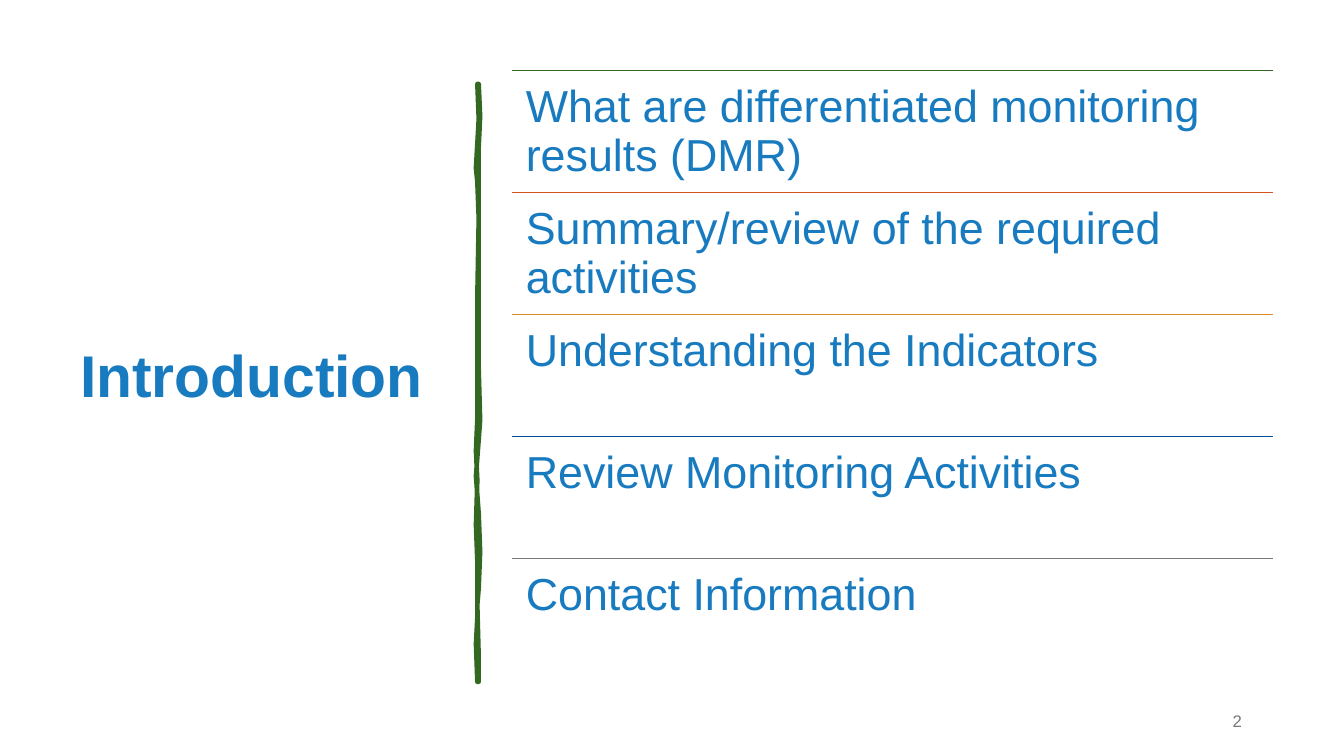
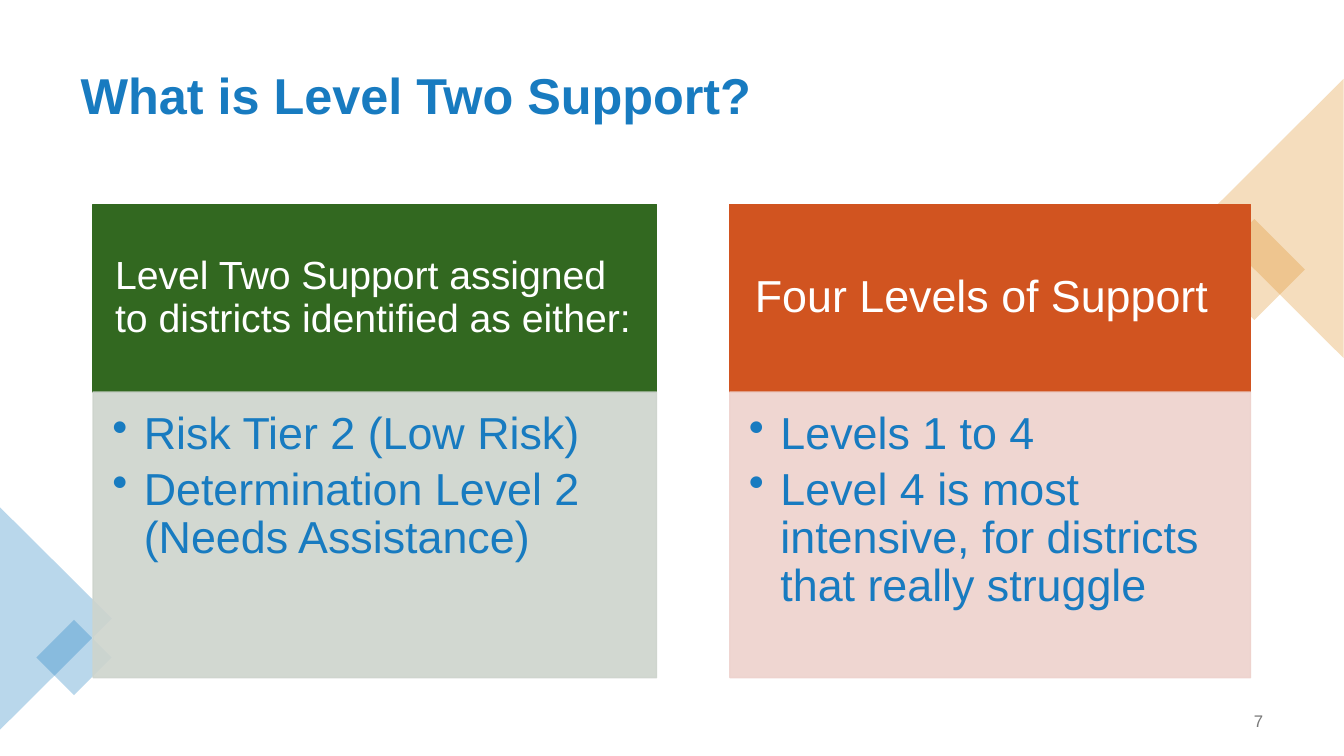
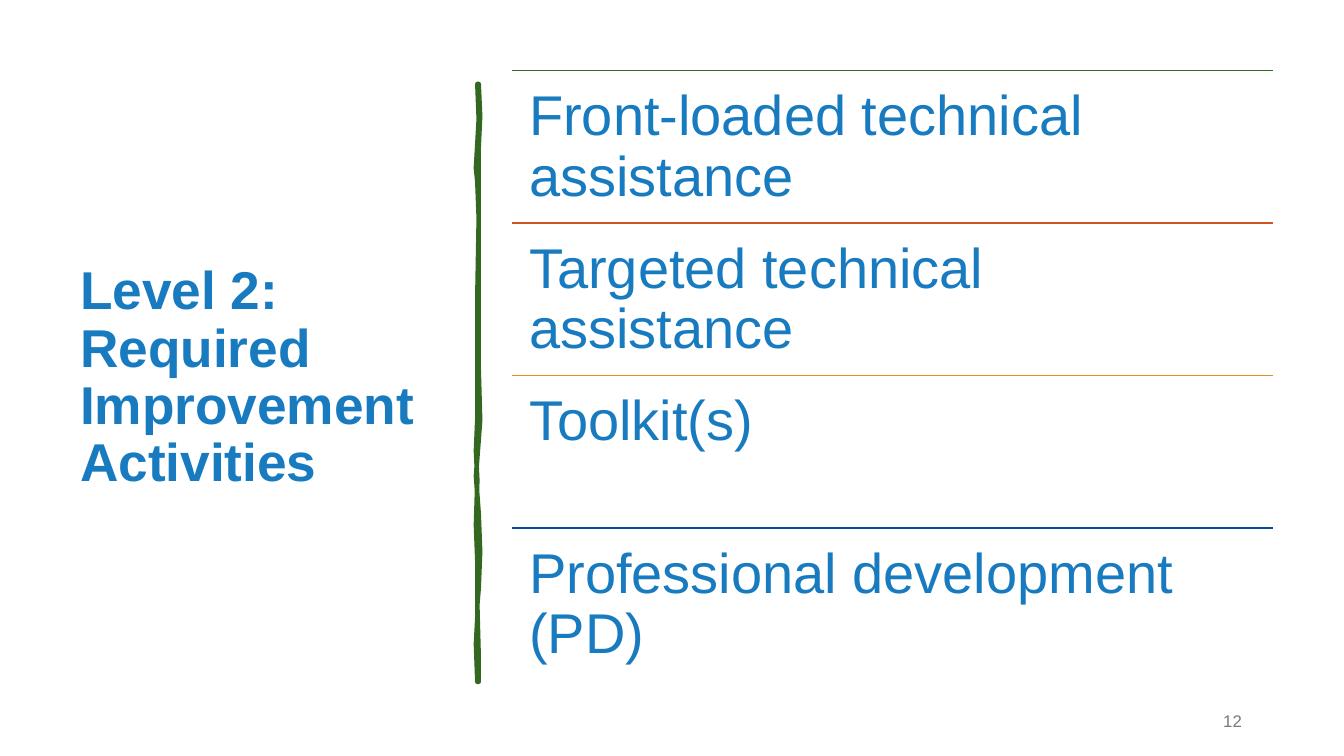
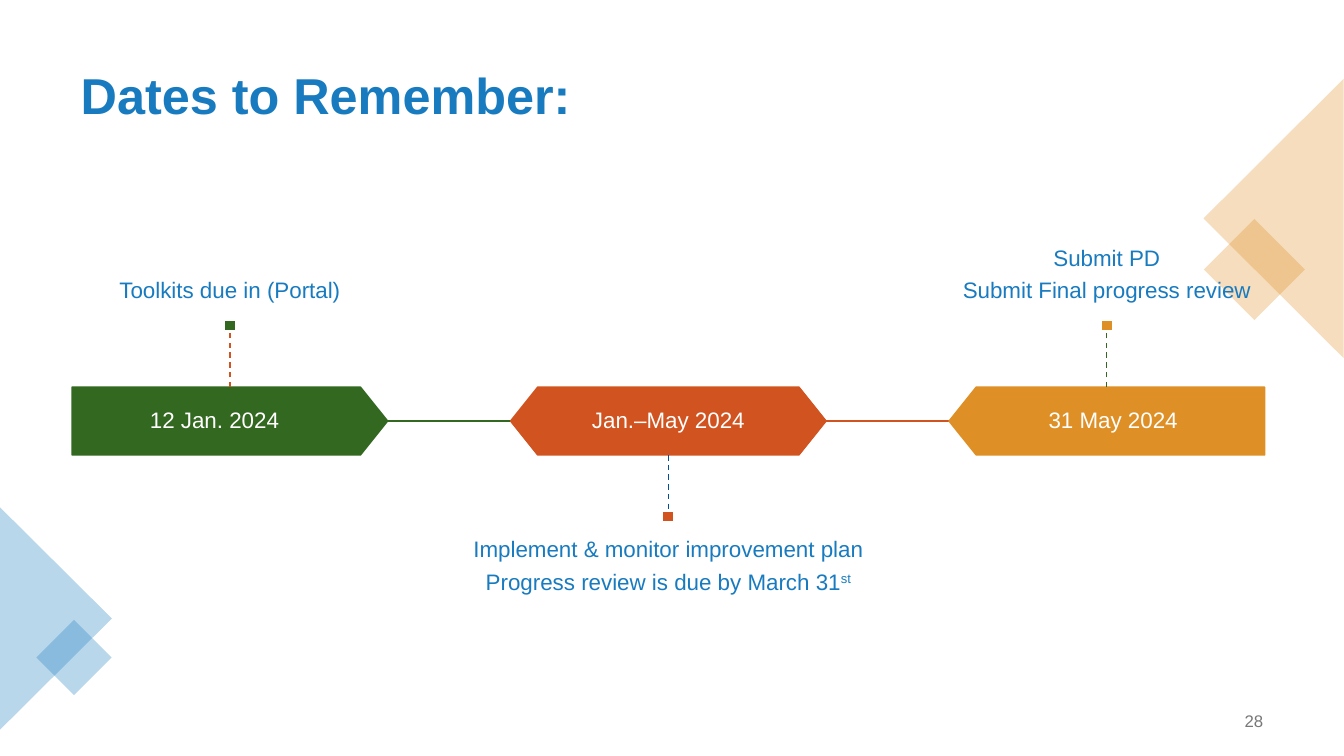
from dataclasses import dataclass

from lxml import etree
from pptx import Presentation
from pptx.dml.color import RGBColor
from pptx.enum import dml, shapes, text
from pptx.oxml.ns import qn
from pptx.util import Pt

KINDS = shapes.MSO_SHAPE
ALIGN = text.PP_ALIGN
ANCHOR = text.MSO_ANCHOR


@dataclass(frozen=True)
class Theme:
    font: str = "Arial"
    blue: str = "187BC0"
    green: str = "326820"
    rust: str = "D15420"
    amber: str = "DE9027"
    navy: str = "004E9A"
    gray: str = "787878"
    white: str = "FFFFFF"
    pale_green: str = "CED4CD"
    pale_rust: str = "EED2CD"
    title_size: int = 36
    body_size: int = 32
    date_size: int = 16
    number_size: int = 12


T = Theme()
ACCENTS = [T.green, T.rust, T.amber, T.navy, T.gray]

INTRODUCTION = dict(
    title="Introduction", title_size=42, number=2, size=32,
    topics=["What are differentiated monitoring results (DMR)",
            "Summary/review of the required activities",
            "Understanding the Indicators",
            "Review Monitoring Activities",
            "Contact Information"])

ACTIVITIES = dict(
    title="Level 2: Required Improvement Activities", title_size=38, number=12, size=40,
    topics=["Front-loaded technical assistance",
            "Targeted technical assistance",
            "Toolkit(s)",
            "Professional development (PD)"])

SUPPORT_CARDS = [
    dict(left=66.5, width=402.5, color=T.green, pale=T.pale_green, size=28,
         heading="Level Two Support assigned to districts identified as either:",
         points=["Risk Tier 2 (Low Risk)", "Determination Level 2 (Needs Assistance)"]),
    dict(left=521.3, width=372, color=T.rust, pale=T.pale_rust, size=32,
         heading="Four Levels of Support",
         points=["Levels 1 to 4",
                 "Level 4 is most intensive, for districts that really struggle"]),
]

# Text between a pair of ^ marks is raised.
MILESTONES = [
    dict(date="12 Jan. 2024", notes=["Toolkits due in (Portal)"], above=True,
         kind=KINDS.PENTAGON, turn=0, color=T.green, stem=T.rust, date_shift=-11),
    dict(date="Jan.–May 2024", above=False,
         notes=["Implement & monitor improvement plan",
                "Progress review is due by March 31^st^"],
         kind=KINDS.HEXAGON, turn=0, color=T.rust, stem=T.navy, date_shift=0),
    dict(date="31 May 2024", notes=["Submit PD", "Submit Final progress review"], above=True,
         kind=KINDS.PENTAGON, turn=180, color=T.amber, stem=T.green, date_shift=4.5),
]

# Corner ornaments: left, top, width, height, rotation, kind, colour
CORNERS = [
    (870.5, 167, 51, 51, 45, KINDS.RECTANGLE, T.amber),
    (810, 106, 199.4, 100, 270, KINDS.ISOSCELES_TRIANGLE, T.amber),
    (-39.6, 401.8, 159, 80, 90, KINDS.ISOSCELES_TRIANGLE, T.blue),
    (33.8, 450.7, 38, 38, 45, KINDS.RECTANGLE, T.blue),
]

# Outline of the hand-drawn divider: down its right edge, up its left edge
BRUSH = [
    (342, 60.5), (343.1, 83), (342, 105), (341.5, 120), (342.2, 152), (342, 163),
    (341.7, 186), (342, 212), (342.3, 235), (342, 256), (341.8, 264), (343.2, 300),
    (342, 314), (340.2, 340), (342, 367), (343.1, 394), (342, 420), (341.4, 432),
    (342.2, 470), (342, 487), (340.6, 487), (340, 460), (340.6, 441), (341.1, 422),
    (340.6, 401), (340, 375), (340.6, 343), (340, 322), (340.6, 299), (340.6, 212),
    (341.5, 156), (340.6, 130), (339.6, 120), (341.5, 85), (340.6, 60.5),
]


def rgb(color):
    return RGBColor.from_string(color)


def write(frame, paragraphs, *, size, color=T.blue, bold=False, align=ALIGN.LEFT,
          anchor=ANCHOR.TOP, inset=(7.2, 3.6, 7.2, 3.6), after=0.0, spacing=0.9, bullet=False):
    frame.word_wrap = True
    frame.auto_size = text.MSO_AUTO_SIZE.NONE
    frame.vertical_anchor = anchor
    (frame.margin_left, frame.margin_top,
     frame.margin_right, frame.margin_bottom) = map(Pt, inset)
    for i, line in enumerate(paragraphs):
        para = frame.paragraphs[0] if i == 0 else frame.add_paragraph()
        para.alignment = align
        para.line_spacing = spacing
        para.space_after = Pt(after)
        if bullet:
            props = para._p.get_or_add_pPr()
            props.set("marL", str(Pt(22.5)))
            props.set("indent", str(Pt(-22.5)))
            etree.SubElement(props, qn("a:buChar")).set("char", "•")
        for part, words in enumerate(line.split("^")):
            if not words:
                continue
            run = para.add_run()
            run.text = words
            run.font.name, run.font.size, run.font.bold = T.font, Pt(size), bold
            run.font.color.rgb = rgb(color)
            if part % 2:
                run._r.get_or_add_rPr().set("baseline", "30000")


def add_text(slide, box, paragraphs, **style):
    write(slide.shapes.add_textbox(*map(Pt, box)).text_frame, paragraphs, **style)


def paint(shape, fill, line=None, width=1.0, opacity=100):
    shape.shadow.inherit = False
    shape.fill.solid()
    shape.fill.fore_color.rgb = rgb(fill)
    if line:
        shape.line.color.rgb = rgb(line)
        shape.line.width = Pt(width)
    else:
        shape.line.fill.background()
    if opacity < 100:
        for tint in shape._element.spPr.iter(qn("a:srgbClr")):
            etree.SubElement(tint, qn("a:alpha")).set("val", str(opacity * 1000))


def add_shape(slide, kind, box, fill, turn=0, **look):
    shape = slide.shapes.add_shape(kind, *map(Pt, box))
    shape.rotation = turn
    paint(shape, fill, **look)
    return shape


def add_line(slide, start, end, color, dashed=False):
    line = slide.shapes.add_connector(
        shapes.MSO_CONNECTOR.STRAIGHT, *map(Pt, (*start, *end)))
    line.line.color.rgb = rgb(color)
    line.line.width = Pt(1)
    if dashed:
        line.line.dash_style = dml.MSO_LINE.DASH
    etree.SubElement(line._element.spPr, qn("a:effectLst"))
    return line


def new_slide(deck, title, box, size, number, number_left):
    slide = deck.slides.add_slide(deck.slide_layouts[5])
    heading = slide.shapes.title
    heading.left, heading.top, heading.width, heading.height = map(Pt, box)
    write(heading.text_frame, [title], size=size, bold=True, anchor=ANCHOR.MIDDLE)
    add_text(slide, (number_left, 500.4, 216, 28.8), [str(number)], size=T.number_size,
             color=T.gray, align=ALIGN.RIGHT, anchor=ANCHOR.MIDDLE, after=6, spacing=1.0)
    return slide


def topic_slide(deck, title, title_size, number, size, topics):
    """Title on the left, brush divider, ruled list on the right."""
    slide = new_slide(deck, title, (50, 50.4, 269, 440), title_size, number, 678.2)
    outline = slide.shapes.build_freeform(*BRUSH[0], scale=Pt(1))
    outline.add_line_segments(BRUSH[1:], close=True)
    paint(outline.convert_to_shape(), T.green, line=T.green, width=3.25)
    left, top, width, height = 366, 50.4, 543.4, 435.6
    row = height / len(topics)
    for i, (topic, color) in enumerate(zip(topics, ACCENTS)):
        y = top + i * row
        add_line(slide, (left, y), (left + width, y), color)
        add_text(slide, (left, y, width, row), [topic], size=size,
                 inset=(size * 0.3,) * 4, after=size * 0.35)


def corner_slide(deck, title, number):
    slide = new_slide(deck, title, (50.4, 25.2, 859, 89.3), T.title_size, number, 693.4)
    for *box, turn, kind, color in CORNERS:
        add_shape(slide, kind, box, color, turn=turn, opacity=30)
    return slide


def support_slide(deck):
    slide = corner_slide(deck, "What is Level Two Support?", 7)
    top, head, body = 146, 134, 204
    for card in SUPPORT_CARDS:
        left, width, size = card["left"], card["width"], card["size"]
        header = add_shape(slide, KINDS.RECTANGLE, (left, top, width, head),
                           card["color"], line=card["color"])
        write(header.text_frame, [card["heading"]], size=size, color=T.white,
              anchor=ANCHOR.MIDDLE, after=size * 0.35,
              inset=(size * 0.56, size * 0.3) * 2)
        panel = add_shape(slide, KINDS.RECTANGLE, (left, top + head, width, body),
                          card["pale"], line=card["pale"], opacity=90)
        write(panel.text_frame, card["points"], size=T.body_size, bullet=True,
              inset=(13.7, 13.7, 18, 20), after=4.8)


def dates_slide(deck):
    slide = corner_slide(deck, "Dates to Remember:", 28)
    left, top, width, height, gap = 51.5, 276.5, 225.4, 48.5, 87.8
    stem, dot, note_width, note_height = 40, 8, 313.2, 129.6
    middle = top + height / 2
    for i, stop in enumerate(MILESTONES):
        x = left + i * (width + gap)
        center = x + width / 2
        if i:
            add_line(slide, (x - gap, middle), (x, middle), MILESTONES[i - 1]["color"])
        arrow = add_shape(slide, stop["kind"], (x, top, width, height), stop["color"],
                          turn=stop["turn"], line=stop["color"])
        arrow.adjustments[0] = 0.4
        add_text(slide, (x + stop["date_shift"], top, width, height), [stop["date"]],
                 size=T.date_size, color=T.white, align=ALIGN.CENTER,
                 anchor=ANCHOR.MIDDLE, inset=(9.4,) * 4, after=6)

        if stop["above"]:
            edge, dot_top = top, top - stem - dot
            note_top, anchor, side = dot_top - note_height, ANCHOR.BOTTOM, 2
        else:
            edge, dot_top = top + height, top + height + stem
            note_top, anchor, side = dot_top + dot, ANCHOR.TOP, 0
        marker = add_shape(slide, KINDS.RECTANGLE, (center - dot / 2, dot_top, dot, dot),
                           stop["color"], line=T.white)
        add_line(slide, (center, edge), (center, dot_top), stop["stem"],
                 dashed=True).end_connect(marker, side)
        add_text(slide, (center - note_width / 2, note_top, note_width, note_height),
                 stop["notes"], size=T.date_size, align=ALIGN.CENTER, anchor=anchor,
                 inset=(0, 11.5, 0, 11.5), after=6)


def main():
    deck = Presentation()
    deck.slide_width, deck.slide_height = Pt(960), Pt(540)
    topic_slide(deck, **INTRODUCTION)
    support_slide(deck)
    topic_slide(deck, **ACTIVITIES)
    dates_slide(deck)
    deck.save("out.pptx")


if __name__ == "__main__":
    main()
